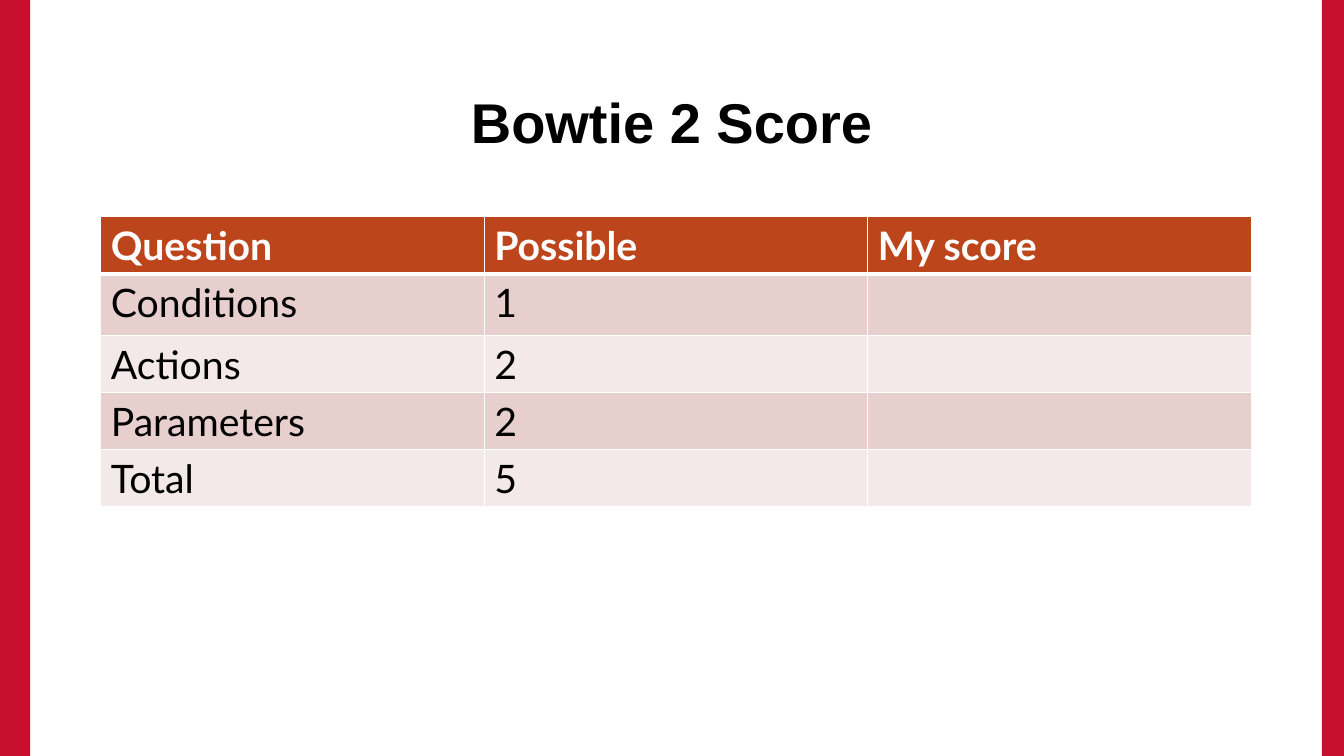
from dataclasses import dataclass

from lxml.etree import SubElement
from pptx import Presentation
from pptx.dml.color import RGBColor
from pptx.enum.shapes import MSO_SHAPE
from pptx.enum.text import MSO_ANCHOR, MSO_AUTO_SIZE, PP_ALIGN
from pptx.oxml.ns import qn
from pptx.util import Inches, Pt


@dataclass(frozen=True)
class Theme:
    side_bar: str = "C8102E"
    header: str = "BC451B"
    bands: tuple = ("E7CFCD", "F3E9E8")
    light: str = "FFFFFF"
    dark: str = "000000"
    title_font: str = "Arial"
    table_font: str = "Lato"
    title_size: int = 40
    table_size: int = 28


theme = Theme()


def add_span(para, text, font, size, color, bold):
    span = para.add_run()
    span.text = text
    span.font.name = font
    span.font.size = Pt(size)
    span.font.bold = bold
    span.font.color.rgb = RGBColor.from_string(color)


def add_border(cell, side, points):
    line = SubElement(cell._tc.get_or_add_tcPr(), qn(f"a:ln{side}"), w=str(Pt(points)))
    fill = SubElement(line, qn("a:solidFill"))
    SubElement(fill, qn("a:srgbClr"), val=theme.light)


# Deck and page
deck = Presentation()
deck.slide_width, deck.slide_height = Inches(13.33), Inches(7.5)
page = deck.slides.add_slide(deck.slide_layouts[5])

# Side bars
for left, width in ((0, 0.3), (13.11, 0.22)):
    bar = page.shapes.add_shape(
        MSO_SHAPE.RECTANGLE, Inches(left), 0, Inches(width), deck.slide_height)
    bar.shadow.inherit = False
    bar.fill.solid()
    bar.fill.fore_color.rgb = RGBColor.from_string(theme.side_bar)
    bar.line.fill.background()

# Title
title = page.shapes.title
title.left, title.top = Inches(1), Inches(0.67)
title.width, title.height = Inches(11.32), Inches(1.06)
title.text_frame.auto_size = MSO_AUTO_SIZE.NONE
title.text_frame.vertical_anchor = MSO_ANCHOR.MIDDLE
para = title.text_frame.paragraphs[0]
para.alignment = PP_ALIGN.CENTER
add_span(para, "Bowtie 2 Score", theme.title_font, theme.title_size, theme.dark, True)

# Score table
scores = (
    ("Question", "Possible", "My score"),
    ("Conditions", "1", ""),
    ("Actions", "2", ""),
    ("Parameters", "2", ""),
    ("Total", "5", ""),
)
row_heights = (0.56, 0.61, 0.56, 0.56, 0.56)
table = page.shapes.add_table(
    len(scores), len(scores[0]), Inches(1), Inches(2.15),
    Inches(11.41), Inches(sum(row_heights))).table

for row_index, (values, height) in enumerate(zip(scores, row_heights)):
    is_header = row_index == 0
    table.rows[row_index].height = Inches(height)
    band = theme.header if is_header else theme.bands[(row_index - 1) % 2]
    for column_index, value in enumerate(values):
        cell = table.cell(row_index, column_index)
        for side in "LRTB":
            thick = (is_header and side == "B") or (row_index == 1 and side == "T")
            add_border(cell, side, 3 if thick else 1)
        cell.fill.solid()
        cell.fill.fore_color.rgb = RGBColor.from_string(band)
        if value:
            add_span(cell.text_frame.paragraphs[0], value, theme.table_font,
                     theme.table_size, theme.light if is_header else theme.dark, is_header)

deck.save("out.pptx")
